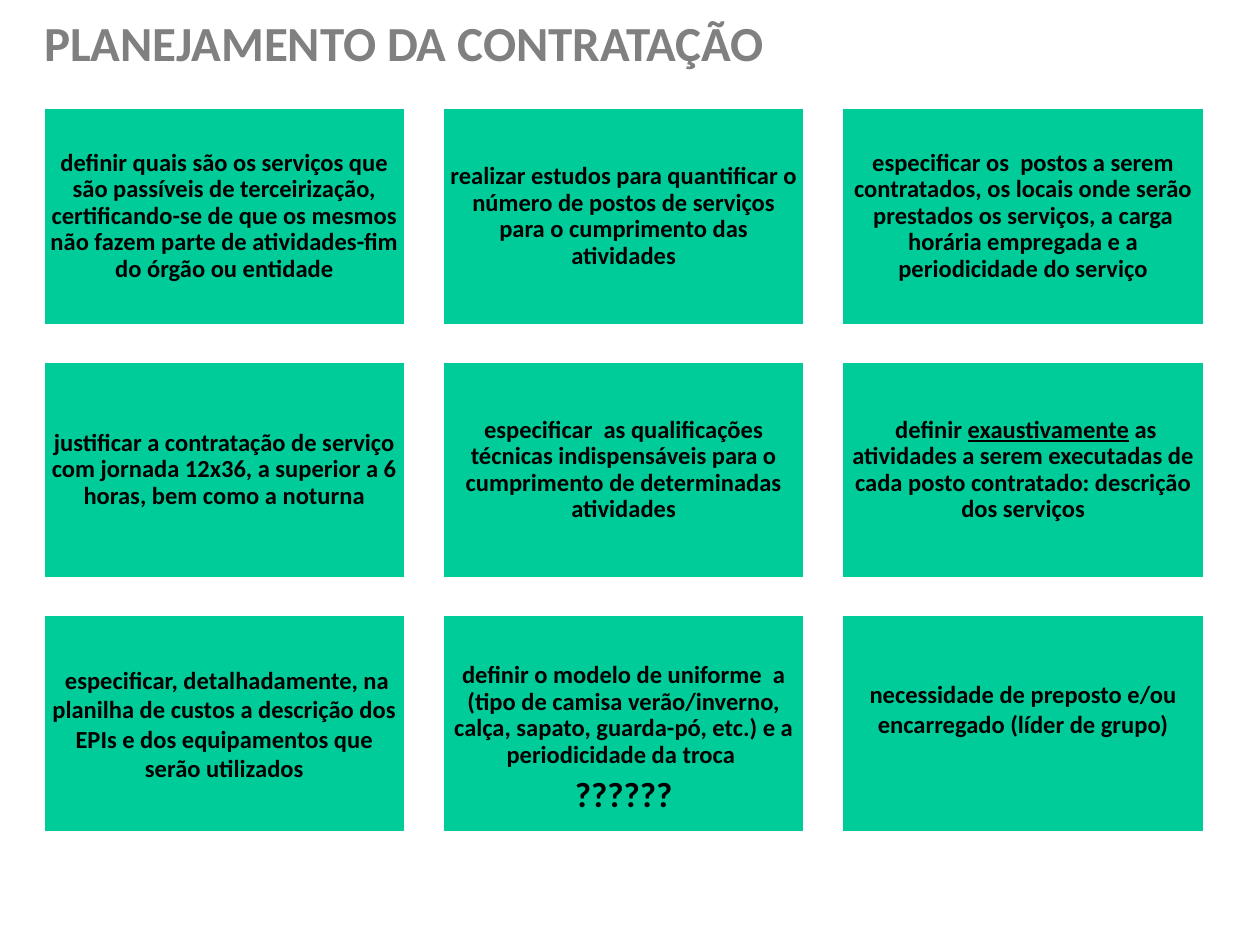
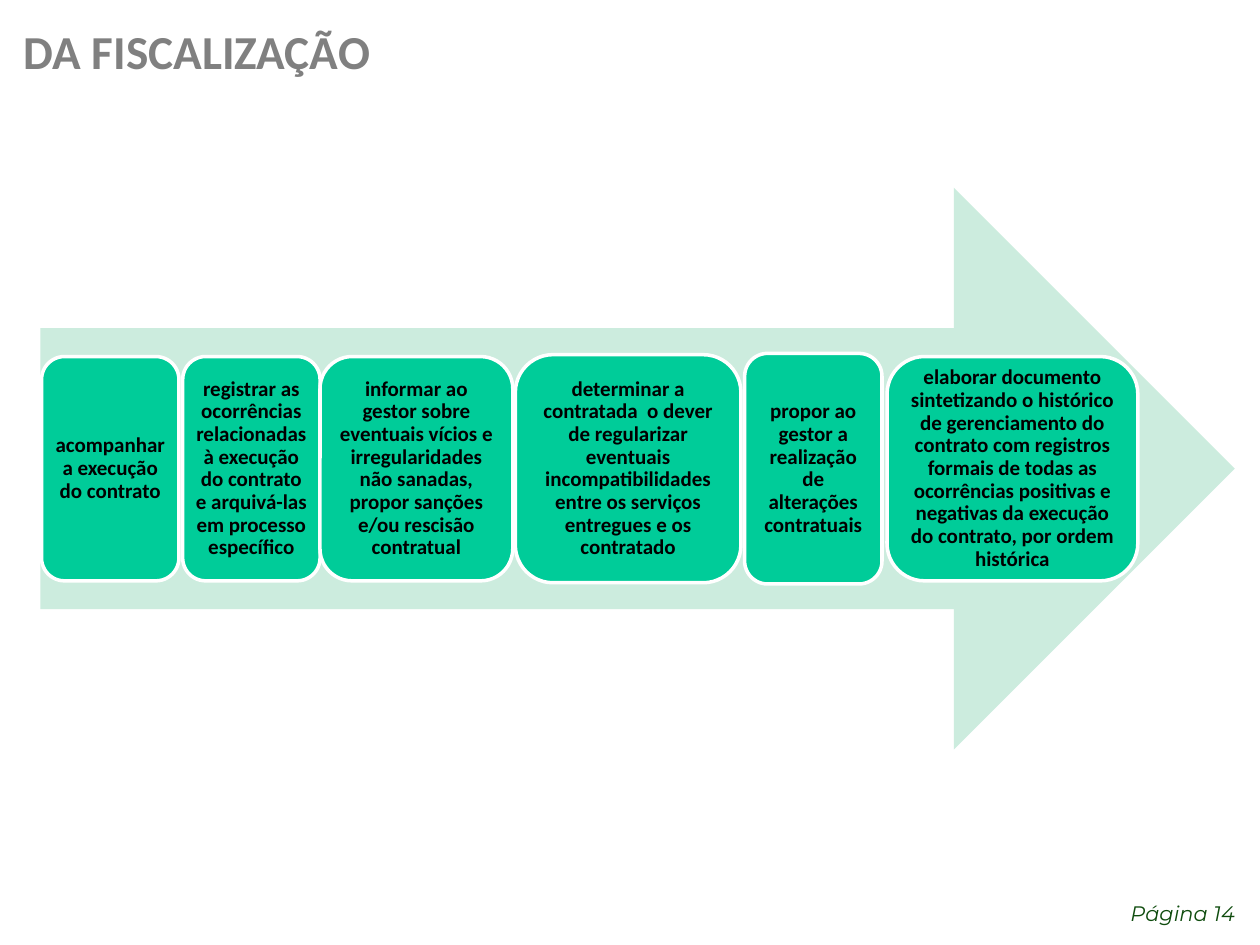
import pptx
import pptx.dml.color
import pptx.enum.shapes
import pptx.enum.text
import pptx.util

Inches = pptx.util.Inches
Pt = pptx.util.Pt
SHAPES = pptx.enum.shapes.MSO_SHAPE
ALIGN = pptx.enum.text.PP_ALIGN
MIDDLE = pptx.enum.text.MSO_ANCHOR.MIDDLE

COLORS = {
    "title": "808080",
    "card": "00CC99",
    "arrow": "CCECDE",
    "outline": "FFFFFF",
    "text": "000000",
    "footer": "0F4C0E",
}
FONT = "Calibri"
UNDERLINE_MARK = "*"

PLANNING_CARDS = [
    {"text": "definir quais são os serviços que são passíveis de terceirização, certificando-se "
             "de que os mesmos não fazem parte de atividades-fim do órgão ou entidade"},
    {"text": "realizar estudos para quantificar o número de postos de serviços para o "
             "cumprimento das atividades"},
    {"text": "especificar os  postos a serem contratados, os locais onde serão prestados os "
             "serviços, a carga horária empregada e a periodicidade do serviço"},
    {"text": "justificar a contratação de serviço com jornada 12x36, a superior a 6 horas, "
             "bem como a noturna"},
    {"text": "especificar  as qualificações técnicas indispensáveis para o cumprimento de "
             "determinadas atividades"},
    {"text": " definir *exaustivamente* as atividades a serem executadas de cada posto "
             "contratado: descrição dos serviços"},
    {"text": " especificar, detalhadamente, na planilha de custos a descrição dos EPIs e dos "
             "equipamentos que serão utilizados", "spacing": 1.0},
    {"text": "definir o modelo de uniforme  a (tipo de camisa verão/inverno, calça, sapato, "
             "guarda-pó, etc.) e a periodicidade da troca ",
     "question": "??????", "top_inset": 0.3},
    {"text": "necessidade de preposto e/ou encarregado (líder de grupo)",
     "spacing": 1.0, "bottom_inset": 0.3},
]

INSPECTION_STEPS = [
    (0.01, 1.09, 1.78, "acompanhar a execução do contrato"),
    (1.13, 1.09, 1.78, "registrar as ocorrências relacionadas à execução do contrato e "
                       "arquivá-las em processo específico"),
    (2.22, 1.53, 1.78, "informar ao gestor sobre eventuais vícios e irregularidades não "
                       "sanadas, propor sanções e/ou rescisão contratual"),
    (3.77, 1.79, 1.81, "determinar a contratada  o dever de regularizar eventuais "
                       "incompatibilidades entre os serviços entregues e os contratado"),
    (5.59, 1.09, 1.83, "propor ao gestor a realização de alterações contratuais"),
    (6.72, 1.99, 1.78, "elaborar documento sintetizando o histórico de gerenciamento do "
                       "contrato com registros formais de todas as ocorrências positivas e "
                       "negativas da execução do contrato, por ordem histórica"),
]


def color(name):
    """Return the palette colour with the given name."""
    return pptx.dml.color.RGBColor.from_string(COLORS[name])


def format_font(font, size, color_name, name=FONT, bold=True, italic=False):
    """Set the face, size, weight and colour of a font."""
    font.name = name
    font.size = Pt(size)
    font.bold = bold
    font.italic = italic
    font.color.rgb = color(color_name)


def set_insets(frame, inset, top=None, bottom=None):
    """Set the four margins of a text frame, wrap it and centre it vertically."""
    frame.margin_left = frame.margin_right = Inches(inset)
    frame.margin_top = Inches(inset if top is None else top)
    frame.margin_bottom = Inches(inset if bottom is None else bottom)
    frame.word_wrap = True
    frame.vertical_anchor = MIDDLE


def fill_paragraph(para, text, size, spacing=0.9):
    """Write centred bold text, underlining the parts between marks."""
    para.alignment = ALIGN.CENTER
    para.line_spacing = spacing
    for index, part in enumerate(text.split(UNDERLINE_MARK)):
        span = para.add_run()
        span.text = part
        format_font(span.font, size, "text")
        if index % 2:
            span.font.underline = True


def add_block(page, kind, box, fill, outline=None):
    """Add a filled preset shape, with a 2 pt line when an outline is named."""
    shape = page.shapes.add_shape(kind, *map(Inches, box))
    shape.shadow.inherit = False
    shape.fill.solid()
    shape.fill.fore_color.rgb = color(fill)
    if outline:
        shape.line.color.rgb = color(outline)
        shape.line.width = Pt(2)
    else:
        shape.line.fill.background()
    return shape


def add_page(deck, title, box, size):
    """Add a title-only slide and place its title."""
    page = deck.slides.add_slide(deck.slide_layouts[5])
    heading = page.shapes.title
    heading.left, heading.top, heading.width, heading.height = map(Inches, box)
    frame = heading.text_frame
    frame.text = title
    frame.auto_size = pptx.enum.text.MSO_AUTO_SIZE.NONE
    set_insets(frame, 0.1, top=0.05, bottom=0.05)
    para = frame.paragraphs[0]
    para.alignment = ALIGN.LEFT
    format_font(para.runs[0].font, size, "title")
    return page


def add_card_grid(page, box, cards, columns=3, column_gap=0.29, row_gap=0.28):
    """Fill the box with an even grid of text cards."""
    left, top, width, height = box
    rows = len(cards) // columns
    card_width = (width - column_gap * (columns - 1)) / columns
    card_height = (height - row_gap * (rows - 1)) / rows
    for index, card in enumerate(cards):
        row, column = divmod(index, columns)
        card_box = (left + column * (card_width + column_gap),
                    top + row * (card_height + row_gap), card_width, card_height)
        shape = add_block(page, SHAPES.RECTANGLE, card_box, "card", "outline")
        frame = shape.text_frame
        set_insets(frame, 0.06, card.get("top_inset"), card.get("bottom_inset"))
        para = frame.paragraphs[0]
        fill_paragraph(para, card["text"], 14, card.get("spacing", 0.9))
        if "question" in card:
            para.space_after = Pt(5)
            fill_paragraph(frame.add_paragraph(), card["question"], 20)


def add_step_arrow(page, box, steps):
    """Draw the arrow in the box and centre the steps on its axis."""
    left, top, width, height = box
    add_block(page, SHAPES.RIGHT_ARROW, box, "arrow")
    for offset, step_width, step_height, text in steps:
        step_box = (left + offset, top + (height - step_height) / 2, step_width, step_height)
        shape = add_block(page, SHAPES.ROUNDED_RECTANGLE, step_box, "card", "outline")
        set_insets(shape.text_frame, 0.05)
        fill_paragraph(shape.text_frame.paragraphs[0], text, 12)


def add_page_number(page, box, text):
    """Write the page number, aligned right."""
    frame = page.shapes.add_textbox(*map(Inches, box)).text_frame
    frame.text = text
    set_insets(frame, 0.1, top=0.05, bottom=0.05)
    para = frame.paragraphs[0]
    para.alignment = ALIGN.RIGHT
    format_font(para.runs[0].font, 12, "footer", "Montserrat", bold=False, italic=True)


def main():
    """Build the two slides and save the deck."""
    deck = pptx.Presentation()
    deck.slide_width, deck.slide_height = Inches(10), Inches(7.5)

    planning = add_page(deck, "PLANEJAMENTO DA CONTRATAÇÃO", (0.25, 0, 8.08, 0.67), 28)
    add_card_grid(planning, (0.34, 0.85, 9.22, 5.76), PLANNING_CARDS)

    inspection = add_page(deck, "DA FISCALIZAÇÃO", (0.09, 0.09, 6.66, 0.62), 27)
    add_step_arrow(inspection, (0.32, 1.49, 9.48, 4.46), INSPECTION_STEPS)
    add_page_number(inspection, (8.33, 7.09, 1.57, 0.32), "Página 14")

    deck.save("out.pptx")


if __name__ == "__main__":
    main()
